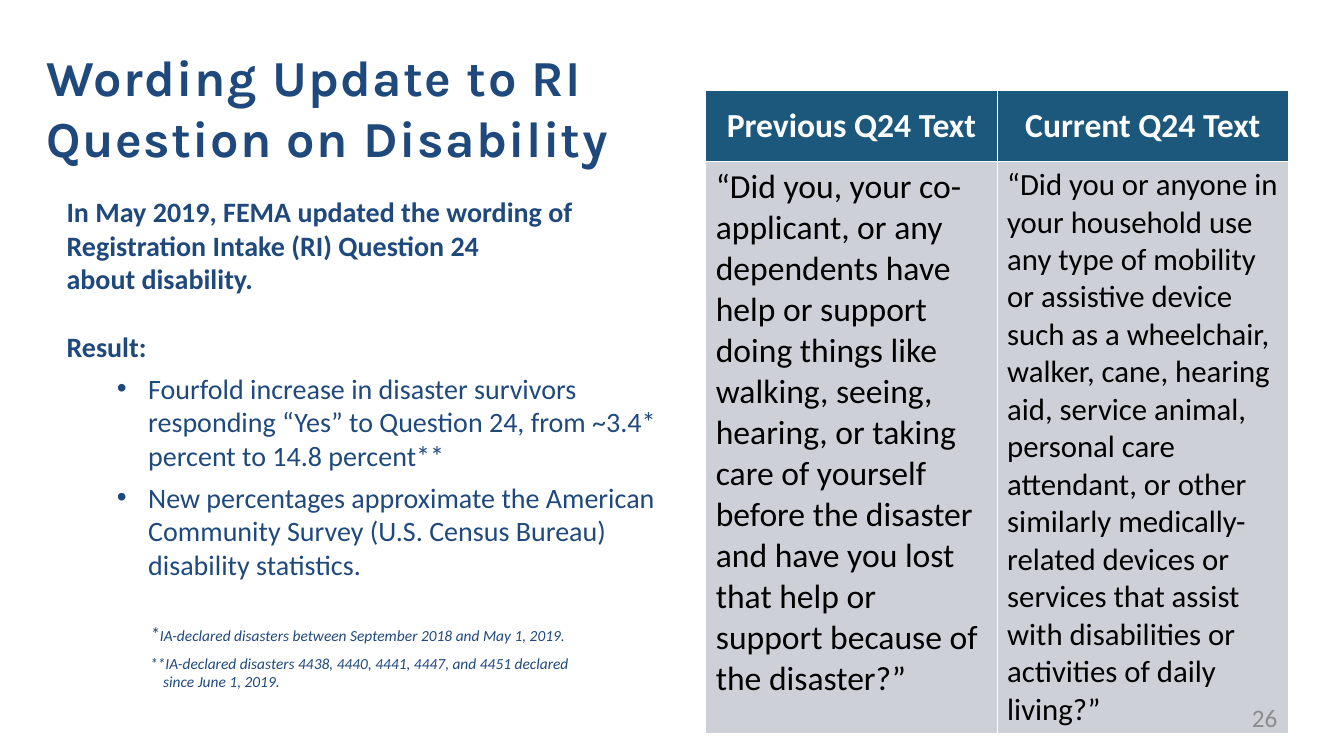
"""Build the slide on the wording update to RI Question 24."""
from dataclasses import dataclass

from lxml.etree import SubElement
from pptx import Presentation
from pptx.dml.color import RGBColor
from pptx.enum.text import MSO_ANCHOR, PP_ALIGN
from pptx.oxml.ns import qn
from pptx.util import Inches, Pt


@dataclass(frozen=True)
class Theme:
    navy: str = "1F497D"
    teal: str = "1B587C"
    pale: str = "CDD1D7"
    white: str = "FFFFFF"
    black: str = "000000"
    gray: str = "8C8C8C"
    head: str = "Karla"
    text: str = "Calibri"
    title: int = 36
    large: int = 24
    cell: int = 22
    body: int = 20
    page: int = 18
    star: int = 14
    note: int = 11


theme = Theme()


def add_run(para, text, size, color, bold=False, italic=False, face=theme.text):
    run = para.add_run()
    run.text = text
    font = run.font
    font.name, font.size, font.bold, font.italic = face, Pt(size), bold, italic
    font.color.rgb = RGBColor.from_string(color)
    return run


def place(shape, left, top, width, height):
    shape.left, shape.top = Inches(left), Inches(top)
    shape.width, shape.height = Inches(width), Inches(height)
    frame = shape.text_frame
    frame.word_wrap = True
    frame.vertical_anchor = MSO_ANCHOR.TOP
    return frame


deck = Presentation()
deck.slide_width, deck.slide_height = Inches(13.33), Inches(7.5)
slide = deck.slides.add_slide(deck.slide_layouts[1])
title, body = slide.placeholders

frame = place(title, 0.46, 0.46, 11.5, 1.21)
frame.margin_left = frame.margin_top = frame.margin_right = frame.margin_bottom = 0
para = frame.paragraphs[0]
para.alignment = PP_ALIGN.LEFT
for row, line in enumerate(["Wording Update to RI", "Question on Disability"]):
    if row:
        para.add_line_break()
    run = add_run(para, line, theme.title, theme.navy, bold=True, face=theme.head)
    run.font._element.set("spc", "100")

heads = ["Previous Q24 Text", "Current Q24 Text"]
quotes = [
    "“Did you, your co-applicant, or any dependents have help or support doing "
    "things like walking, seeing, hearing, or taking care of yourself before the "
    "disaster and have you lost that help or support because of the disaster?”",
    "“Did you or anyone in your household use any type of mobility or assistive "
    "device such as a wheelchair, walker, cane, hearing aid, service animal, "
    "personal care attendant, or other similarly medically-related devices or "
    "services that assist with disabilities or activities of daily living?”",
]
table = slide.shapes.add_table(
    2, 2, Inches(7), Inches(0.9), Inches(5.78), Inches(6.3)).table
table.rows[0].height, table.rows[1].height = Inches(0.7), Inches(5.6)
sizes = [theme.large, theme.cell]
for col, (head, quote, size) in enumerate(zip(heads, quotes, sizes)):
    top, low = table.cell(0, col), table.cell(1, col)
    for cell, fill in [(top, theme.teal), (low, theme.pale)]:
        cell.fill.solid()
        cell.fill.fore_color.rgb = RGBColor.from_string(fill)
    top.vertical_anchor = MSO_ANCHOR.MIDDLE
    para = top.text_frame.paragraphs[0]
    para.alignment = PP_ALIGN.CENTER
    add_run(para, head, theme.large, theme.white, bold=True)
    add_run(low.text_frame.paragraphs[0], quote, size, theme.black)

points = [
    ("In May 2019, FEMA updated the wording of Registration Intake (RI) Question 24",
     False, 0, 0),
    ("about disability.", False, 0, 0),
    ("Result:", False, 24, 6),
    ("Fourfold increase in disaster survivors responding “Yes” to Question 24, "
     "from ~3.4* percent to 14.8 percent**", True, 0, 6),
    ("New percentages approximate the American Community Survey (U.S. Census "
     "Bureau) disability statistics.", True, 0, 0),
]
frame = place(body, 0.56, 1.88, 6.15, 3.97)
for row, (text, item, before, after) in enumerate(points):
    para = frame.add_paragraph() if row else frame.paragraphs[0]
    para.level = int(item)
    para.space_before, para.space_after = Pt(before), Pt(after)
    props = para._p.get_or_add_pPr()
    props.set("marL", str(Inches(0.81 if item else 0)))
    props.set("indent", str(Inches(-0.31 if item else 0)))
    if item:
        SubElement(props, qn("a:buFont"), typeface="Arial")
        SubElement(props, qn("a:buChar"), char="•")
    else:
        SubElement(props, qn("a:buNone"))
    add_run(para, text, theme.body, theme.navy, bold=not item)

notes = [
    [("*", theme.star),
     ("IA-declared disasters between September 2018 and May 1, 2019.", theme.note)],
    [("**IA-declared disasters 4438, 4440, 4441, 4447, and 4451 declared",
      theme.note)],
    [("since June 1, 2019.", theme.note)],
]
frame = place(slide.shapes.add_textbox(0, 0, 0, 0), 1.39, 6.12, 5.42, 0.79)
for row, parts in enumerate(notes):
    para = frame.add_paragraph() if row else frame.paragraphs[0]
    para.space_after = Pt(0 if row else 6)
    if row == 2:
        para._p.get_or_add_pPr().set("marL", str(Inches(0.13)))
    for text, size in parts:
        add_run(para, text, size, theme.navy, italic=True)

frame = place(slide.shapes.add_textbox(0, 0, 0, 0), 9.6, 6.97, 3.07, 0.38)
frame.margin_left = frame.margin_top = frame.margin_right = frame.margin_bottom = 0
para = frame.paragraphs[0]
para.alignment = PP_ALIGN.RIGHT
add_run(para, "26", theme.page, theme.gray)

deck.save("out.pptx")
